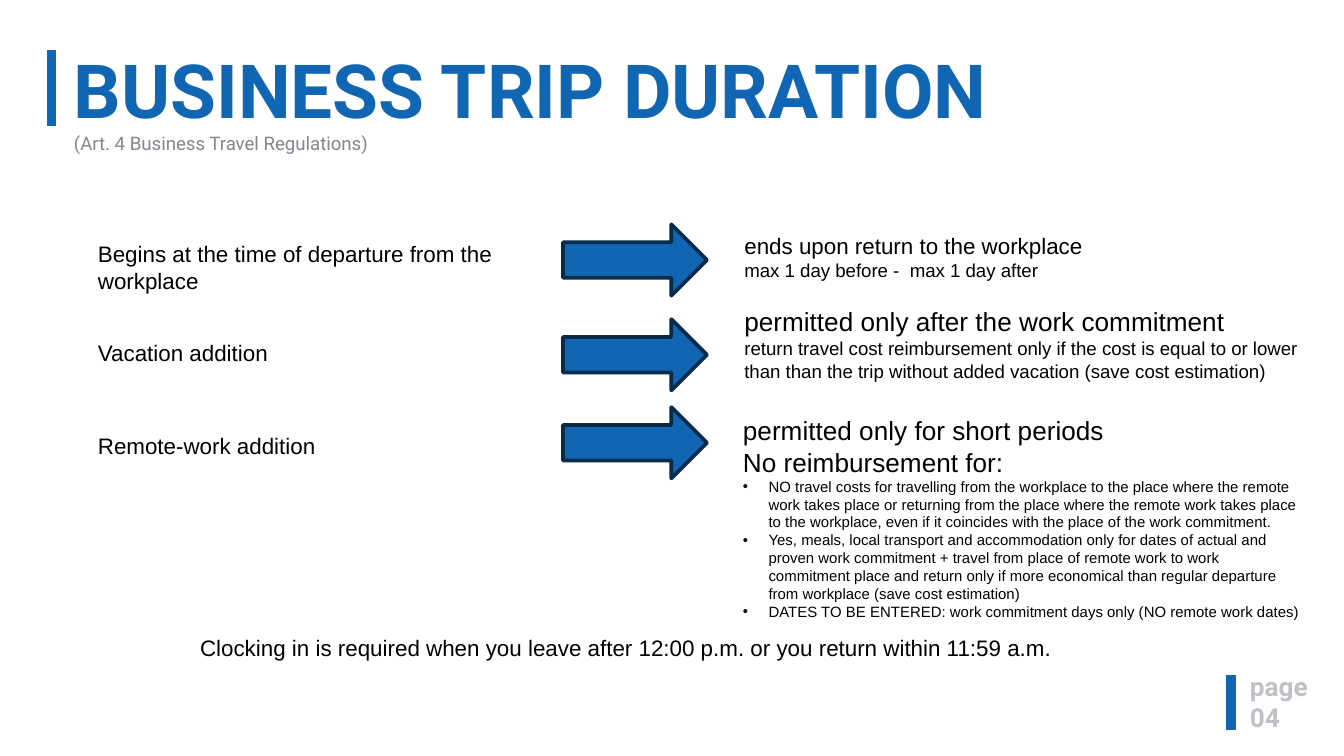
from lxml.etree import SubElement
from pptx import Presentation
from pptx.dml.color import RGBColor
from pptx.enum.shapes import MSO_CONNECTOR, MSO_SHAPE
from pptx.enum.text import MSO_ANCHOR, MSO_AUTO_SIZE, PP_ALIGN
from pptx.oxml.ns import qn
from pptx.util import Inches, Pt

# Widescreen slide, 16:9
deck = Presentation()
deck.slide_width = Inches(10)
deck.slide_height = deck.slide_width * 9 // 16
slide = deck.slides.add_slide(deck.slide_layouts[5])

# Square grid: 100 columns across the slide, rows of the same size
CELL = deck.slide_width / 100
BLUE, NAVY, GREY, PALE, BLACK = "1166B3", "072B4B", "858591", "C0C0C8", "000000"
BODY_FRAME = {"word_wrap": True, "auto_size": MSO_AUTO_SIZE.NONE,
              "vertical_anchor": MSO_ANCHOR.TOP}
TIGHT_FRAME = BODY_FRAME | {"margin_left": Inches(0.05), "margin_right": Inches(0.05),
                            "margin_top": Inches(0.02), "margin_bottom": Inches(0.02)}


def cells(*counts):
    return [round(count * CELL) for count in counts]


def colour(hex_string):
    return RGBColor.from_string(hex_string)


# Accent bars beside the title and the page number
for column, top, bottom in [(3.85, 3.75, 9.4), (91.6, 50.25, 54.35)]:
    bar = slide.shapes.add_connector(
        MSO_CONNECTOR.STRAIGHT, *cells(column, top, column, bottom))
    bar.line.color.rgb = colour(BLUE)
    bar.line.width = Pt(5)
    SubElement(bar._element.spPr, qn("a:effectLst"))

# Title with its legal reference
title = slide.shapes.title
title.left, title.top, title.width, title.height = cells(5, 3.8, 80.4, 8.1)
for name, value in TIGHT_FRAME.items():
    setattr(title.text_frame, name, value)
heading = title.text_frame.paragraphs[0]
heading.alignment = PP_ALIGN.LEFT
heading.line_spacing = 0.9
for text, size, hue, bold in [("BUSINESS TRIP DURATION", 40, BLUE, True),
                              ("(Art. 4 Business Travel Regulations)", 10, GREY, False)]:
    if heading.runs:
        heading.add_line_break()
    run = heading.add_run()
    run.text = text
    run.font.color.rgb = colour(hue)
    for name, value in {"name": "Roboto", "size": Pt(size), "bold": bold}.items():
        setattr(run.font, name, value)

# Arrows from each condition to its rule
for row in (16.7, 23.75, 30.3):
    arrow = slide.shapes.add_shape(MSO_SHAPE.RIGHT_ARROW, *cells(41.9, row, 10.7, 5.3))
    arrow.shadow.inherit = False
    arrow.fill.solid()
    arrow.fill.fore_color.rgb = colour(BLUE)
    arrow.line.color.rgb = colour(NAVY)
    arrow.line.width = Pt(2)

# Texts: grid place, then paragraphs as (text, size, bulleted)
CONDITION, RULE = 6.3, 54.4
body_texts = [
    ((CONDITION, 17.4, 35.1, 5), [
        ("Begins at the time of departure from the workplace", 12, False)]),
    ((CONDITION, 24.75, 15.2, 3), [("Vacation addition", 12, False)]),
    ((CONDITION, 31.7, 19.1, 3), [("Remote-work addition", 12, False)]),
    ((RULE, 16.8, 34.9, 6.7), [
        ("ends upon return to the workplace", 12, False),
        ("max 1 day before -  max 1 day after", 10, False)]),
    ((RULE, 22.25, 44.6, 6.7), [
        ("permitted only after the work commitment", 14, False),
        ("return travel cost reimbursement only if the cost is equal to or lower than "
         "than the trip without added vacation (save cost estimation)", 10, False)]),
    ((RULE - 0.1, 30.35, 43.7, 16.5), [
        ("permitted only for short periods", 14, False),
        ("No reimbursement for:", 14, False),
        ("NO travel costs for travelling from the workplace to the place where the "
         "remote work takes place or returning from the place where the remote work "
         "takes place to the workplace, even if it coincides with the place of the "
         "work commitment.", 8, True),
        ("Yes, meals, local transport and accommodation only for dates of actual and "
         "proven work commitment + travel from place of remote work to work commitment "
         "place and return only if more economical than regular departure from "
         "workplace (save cost estimation)", 8, True),
        ("DATES TO BE ENTERED: work commitment days only (NO remote work dates)",
         8, True)]),
    ((13.9, 46.7, 70.6, 3), [
        ("Clocking in is required when you leave after 12:00 p.m. or you return "
         "within 11:59 a.m.", 12, False)]),
]
page_number = ((92.5, 49.65, 7.5, 5.2), [("page", 14, False), ("04", 14, False)])

body_style = (BODY_FRAME, {"name": "Arial", "bold": False}, BLACK)
page_style = (TIGHT_FRAME, {"name": "Roboto", "bold": True}, PALE)
styled_texts = [(*entry, *body_style) for entry in body_texts]
styled_texts.append((*page_number, *page_style))

for place, lines, frame_format, font_format, hue in styled_texts:
    frame = slide.shapes.add_textbox(*cells(*place)).text_frame
    for name, value in frame_format.items():
        setattr(frame, name, value)
    for index, (text, size, bulleted) in enumerate(lines):
        paragraph = frame.add_paragraph() if index else frame.paragraphs[0]
        paragraph.text = text
        if bulleted:
            properties = paragraph._p.get_or_add_pPr()
            properties.set("marL", str(Inches(0.19)))
            properties.set("indent", str(-Inches(0.19)))
            SubElement(properties, qn("a:buFont"), typeface="Arial")
            SubElement(properties, qn("a:buChar"), char="•")
        font = paragraph.runs[0].font
        font.color.rgb = colour(hue)
        for name, value in (font_format | {"size": Pt(size)}).items():
            setattr(font, name, value)

deck.save("out.pptx")
